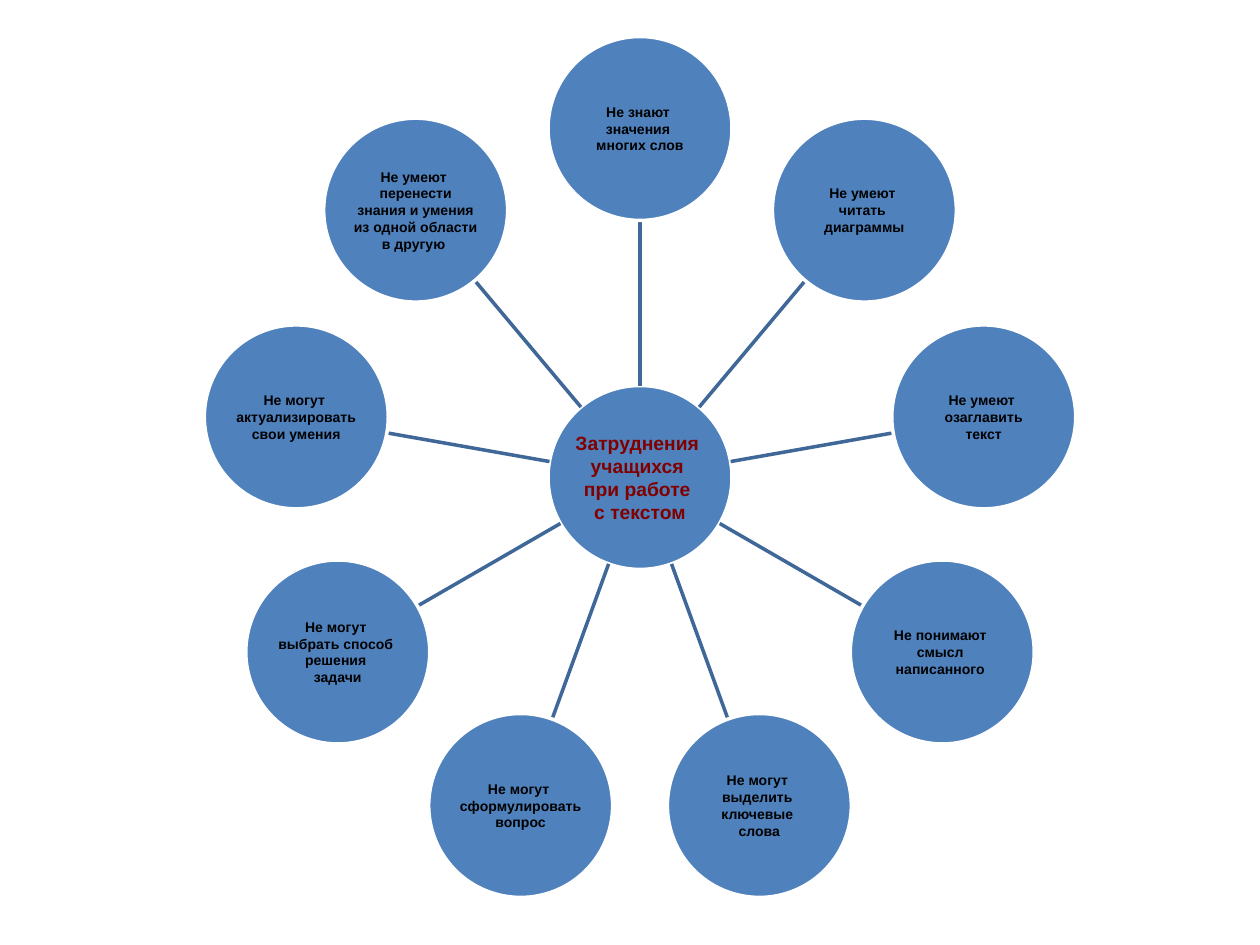
from math import cos, radians, sin

from pptx import Presentation
from pptx.dml.color import RGBColor
from pptx.enum.shapes import MSO_CONNECTOR, MSO_SHAPE
from pptx.enum.text import MSO_ANCHOR, PP_ALIGN
from pptx.oxml.ns import qn
from pptx.util import Inches, Pt

HUB_X, HUB_Y = 5.08, 3.79
DIAMETER = 1.46
RING_RADIUS = 2.77
SPOKE_START, SPOKE_END = 0.73, 2.04

hub_lines = ["Затруднения ", "учащихся ", "при работе ", "с текстом"]
# Clockwise from the top
difficulties = [
    ["Не знают ", "значения ", "многих слов"],
    ["Не умеют ", "читать ", "диаграммы"],
    ["Не умеют ", "озаглавить", "текст"],
    ["Не понимают ", "смысл ", "написанного "],
    ["Не могут ", "выделить ", "ключевые ", "слова"],
    ["Не могут ", "сформулировать", "вопрос"],
    ["Не могут ", "выбрать способ ", "решения ", "задачи"],
    ["Не могут ", "актуализировать", "свои умения"],
    ["Не умеют ", "перенести", "знания и умения", "из одной области", "в другую "],
]


def paint(color_format, hex_color):
    color_format.rgb = RGBColor.from_string(hex_color)


def add_circle(slide, x, y, lines, size, text_color):
    circle = slide.shapes.add_shape(
        MSO_SHAPE.OVAL, Inches(x - DIAMETER / 2), Inches(y - DIAMETER / 2),
        Inches(DIAMETER), Inches(DIAMETER))
    circle.shadow.inherit = False
    circle.fill.solid()
    paint(circle.fill.fore_color, "4F81BD")
    paint(circle.line.color, "FFFFFF")
    circle.line.width = Pt(2)

    frame = circle.text_frame
    frame.word_wrap = False
    frame.vertical_anchor = MSO_ANCHOR.MIDDLE
    frame.margin_left = frame.margin_right = Inches(0.01)
    frame.margin_top = frame.margin_bottom = Inches(0.01)
    for index, line in enumerate(lines):
        paragraph = frame.paragraphs[0] if index == 0 else frame.add_paragraph()
        paragraph.alignment = PP_ALIGN.CENTER
        run = paragraph.add_run()
        run.text = line
        run.font.name = "Arial"
        run.font.size = Pt(size)
        run.font.bold = True
        paint(run.font.color, text_color)


presentation = Presentation()
presentation.slide_width, presentation.slide_height = Inches(10), Inches(7.5)
slide = presentation.slides.add_slide(presentation.slide_layouts[6])

# Hub
add_circle(slide, HUB_X, HUB_Y, hub_lines, 11, "800000")

# Spokes and the ring of difficulties
for position, lines in enumerate(difficulties):
    angle = radians(360 / len(difficulties) * position - 90)
    across, down = cos(angle), sin(angle)

    spoke = slide.shapes.add_connector(
        MSO_CONNECTOR.STRAIGHT,
        Inches(HUB_X + SPOKE_START * across), Inches(HUB_Y + SPOKE_START * down),
        Inches(HUB_X + SPOKE_END * across), Inches(HUB_Y + SPOKE_END * down))
    paint(spoke.line.color, "3F6797")
    spoke.line.width = Pt(2)
    properties = spoke.element.find(qn("p:spPr"))
    properties.append(properties.makeelement(qn("a:effectLst"), {}))

    add_circle(slide, HUB_X + RING_RADIUS * across, HUB_Y + RING_RADIUS * down,
               lines, 8, "000000")

presentation.save("out.pptx")
